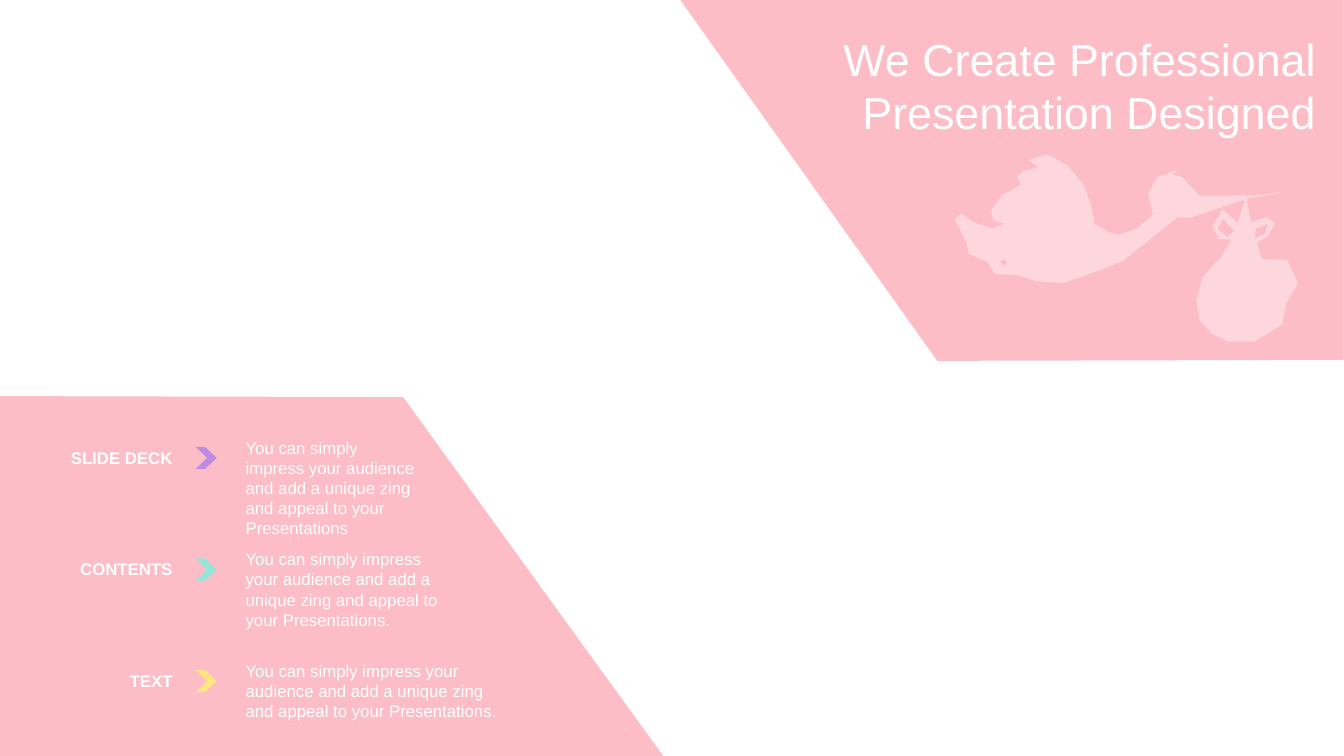
from dataclasses import dataclass

from lxml import etree
from pptx import Presentation
from pptx.dml.color import RGBColor
from pptx.enum.shapes import MSO_SHAPE
from pptx.enum.text import MSO_ANCHOR, MSO_AUTO_SIZE, PP_ALIGN
from pptx.oxml.ns import qn
from pptx.util import Cm, Pt

CHEVRON = MSO_SHAPE.CHEVRON
TOP = MSO_ANCHOR.TOP
NO_AUTOFIT = MSO_AUTO_SIZE.NONE
LEFT, RIGHT = PP_ALIGN.LEFT, PP_ALIGN.RIGHT
TITLE_ONLY = 5


@dataclass(frozen=True)
class Theme:
    font: str = "Arial"
    pink: str = "FDBDC7"
    white: str = "FFFFFF"
    purple: str = "BE8BE2"
    mint: str = "96E5D8"
    yellow: str = "FEE680"
    title_size: int = 32
    text_size: int = 12
    stork_alpha: int = 40


THEME = Theme()

# Outlines are point lists in hundredths of an inch on the slide
OUTLINE_UNIT = Cm(0.0254)
LOWER_PANEL = [(0, 393), (400, 394), (658, 750), (0, 750)]
UPPER_PANEL = [(1333, 357), (930, 358), (675, 0), (1333, 0)]

STORK_BODY = [
    # Knot and beak
    (1277, 258), (1252, 257), (1247, 241), (1258, 234), (1265, 222), (1257, 215),
    (1241, 221), (1237, 197), (1280, 190), (1245, 194), (1190, 194),
    # Head and neck
    (1173, 176), (1163, 173), (1171, 167), (1148, 176), (1139, 192), (1144, 213),
    (1128, 227), (1110, 233), (1099, 230), (1086, 222),
    # Wing
    (1083, 205), (1075, 183), (1059, 164), (1039, 153), (1021, 159), (1030, 166),
    (1015, 170), (1009, 176), (1013, 183), (994, 194), (983, 209), (986, 219),
    (997, 222),
    # Tail and belly
    (984, 227), (965, 220), (954, 212), (947, 217), (959, 241), (961, 252),
    (980, 260), (987, 272), (1010, 273), (1028, 279), (1054, 281), (1078, 273),
    (1114, 259), (1168, 216), (1181, 216), (1235, 198),
    # Bundle
    (1228, 221), (1213, 208), (1203, 224), (1209, 237), (1222, 238), (1210, 257),
    (1193, 275), (1187, 298), (1190, 317), (1202, 331), (1219, 339), (1245, 339),
    (1272, 322), (1277, 299), (1288, 281),
]
STORK_EYE = [(997, 264), (992, 260), (996, 257), (999, 260)]
RIGHT_LOOP = [(1246, 227), (1258, 222), (1255, 232), (1245, 237)]
LEFT_LOOP = [(1218, 235), (1208, 227), (1213, 217), (1225, 229)]

# Label, chevron colour, description, description width and height in cm
PITCH = "You can simply impress your audience and add a unique zing and appeal to your Presentations"
ROWS = [
    ("SLIDE DECK", THEME.purple, PITCH, 4.85, 2.82),
    ("CONTENTS", THEME.mint, PITCH + ".", 5.64, 2.31),
    ("TEXT", THEME.yellow, PITCH + ".", 7.01, 1.8),
]
FIRST_ROW_TOP, ROW_STEP = 10.9, 2.81


def paint(shape, color):
    shape.shadow.inherit = False
    shape.fill.solid()
    shape.fill.fore_color.rgb = RGBColor.from_string(color)
    shape.line.fill.background()


def add_outline(slide, contours, color, alpha=None):
    first, *holes = contours
    builder = slide.shapes.build_freeform(*first[0], scale=OUTLINE_UNIT)
    builder.add_line_segments(first[1:], close=True)
    for hole in holes:
        builder.move_to(*hole[0])
        builder.add_line_segments(hole[1:], close=True)
    outline = builder.convert_to_shape()
    paint(outline, color)
    if alpha is not None:
        rgb = outline.element.spPr.find(qn("a:solidFill")).find(qn("a:srgbClr"))
        etree.SubElement(rgb, qn("a:alpha")).set("val", str(alpha * 1000))


def write(frame, text, size, align, bold=False):
    frame.word_wrap = True
    frame.auto_size = NO_AUTOFIT
    frame.vertical_anchor = TOP
    frame.text = text
    paragraph = frame.paragraphs[0]
    paragraph.alignment = align
    font = paragraph.font
    font.name, font.size, font.bold = THEME.font, Pt(size), bold
    font.color.rgb = RGBColor.from_string(THEME.white)


def add_title(slide, text):
    title = slide.shapes.title
    title.left, title.top = Cm(18.47), Cm(0.79)
    title.width, title.height = Cm(14.78), Cm(2.74)
    frame = title.text_frame
    frame.margin_left, frame.margin_right = Cm(0.13), Cm(0.08)
    frame.margin_top = frame.margin_bottom = Cm(0)
    write(frame, text, THEME.title_size, RIGHT)


def add_row(slide, top, label, color, description, width, height):
    row = slide.shapes.add_group_shape().shapes
    label_box = row.add_textbox(Cm(0.38), Cm(top + 0.25), Cm(4.22), Cm(0.79))
    write(label_box.text_frame, label, THEME.text_size, RIGHT, bold=True)
    description_box = row.add_textbox(Cm(5.94), Cm(top), Cm(width), Cm(height))
    write(description_box.text_frame, description, THEME.text_size, LEFT)
    chevron = row.add_shape(CHEVRON, Cm(4.93), Cm(top + 0.36), Cm(0.53), Cm(0.56))
    chevron.adjustments[0] = 0.55
    paint(chevron, color)


def main():
    prs = Presentation()
    prs.slide_width, prs.slide_height = Cm(33.87), Cm(19.05)
    slide = prs.slides.add_slide(prs.slide_layouts[TITLE_ONLY])

    # Pink panels
    for panel in (LOWER_PANEL, UPPER_PANEL):
        add_outline(slide, [panel], THEME.pink)

    # Labelled rows
    for index, row in enumerate(ROWS):
        add_row(slide, FIRST_ROW_TOP + index * ROW_STEP, *row)

    # Title, brought in front of the panels, and stork
    add_title(slide, "We Create Professional Presentation Designed")
    add_outline(slide, [STORK_BODY, STORK_EYE, RIGHT_LOOP, LEFT_LOOP],
                THEME.white, THEME.stork_alpha)
    title = slide.shapes.title.element
    title.getparent().append(title)

    prs.save("out.pptx")


if __name__ == "__main__":
    main()
